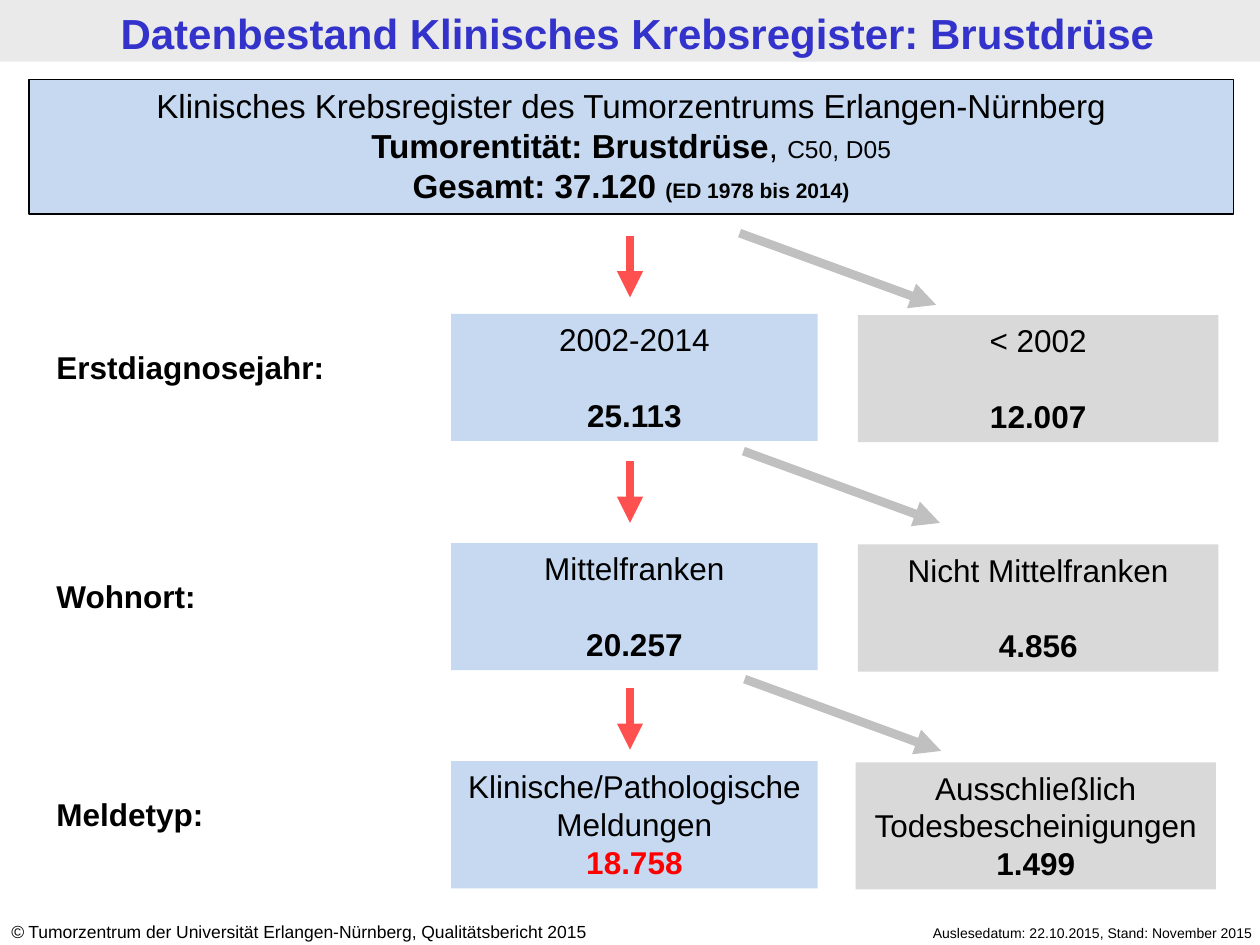
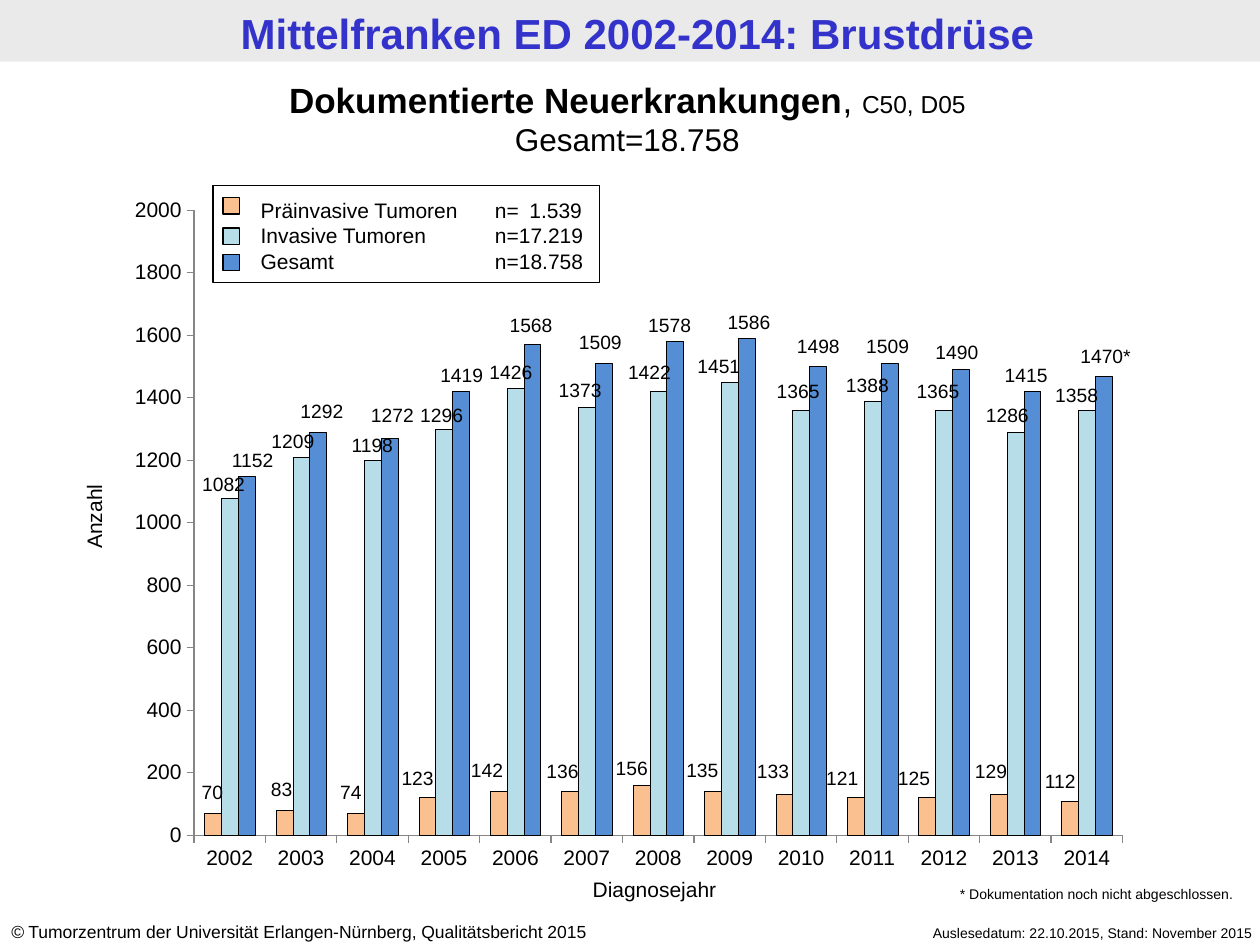
from lxml.etree import SubElement
from pptx import Presentation
from pptx.chart.data import CategoryChartData
from pptx.dml.color import RGBColor
from pptx.enum.chart import XL_CHART_TYPE, XL_TICK_LABEL_POSITION, XL_TICK_MARK
from pptx.enum.shapes import MSO_CONNECTOR, MSO_SHAPE
from pptx.enum.text import MSO_ANCHOR, PP_ALIGN
from pptx.oxml import parse_xml
from pptx.oxml.ns import nsdecls, qn
from pptx.util import Inches, Pt

FONT = "Arial"
COLORS = {
    "text": "000000", "title": "3333CC", "band": "EAEAEA", "kept": "C6D9F1",
    "excluded": "D9D9D9", "highlight": "FF0000", "kept_arrow": "FF5050",
    "excluded_arrow": "C0C0C0", "axis": "868686", "plot": "FFFFFF",
    "preinvasive": "FAC090", "invasive": "B7DEE8", "total": "558ED5",
}
LEFT, CENTER, RIGHT = PP_ALIGN.LEFT, PP_ALIGN.CENTER, PP_ALIGN.RIGHT

# A paragraph is a list of runs: (text, size, optional font settings)
BOLD, ITALIC = {"bold": True}, {"italic": True}
COPYRIGHT = [("©", 10, ITALIC),
             (" Tumorzentrum der Universität Erlangen-Nürnberg, Qualitätsbericht 2015", 10)]
READOUT = [("Auslesedatum: 22.10.2015, Stand: November 2015", 8)]

REGISTER_TITLE = "Datenbestand Klinisches Krebsregister: Brustdrüse"
REGISTER = [
    [("Klinisches Krebsregister des Tumorzentrums Erlangen-Nürnberg", 19)],
    [("Tumorentität: Brustdrüse", 19, BOLD), (", ", 19), ("C50, D05", 14)],
    [("Gesamt: 37.120 ", 19, BOLD), ("(ED 1978 bis 2014)", 12, BOLD)],
]
# Label, card top, kept and excluded cards, excluded left, red arrow top, grey arrow start
STEPS = [
    ("Erstdiagnosejahr:", 2.49, ("2002-2014", "25.113"), ("< 2002", "12.007"),
     6.81, 1.87, (5.87, 1.85)),
    ("Wohnort:", 4.31, ("Mittelfranken", "20.257"), ("Nicht Mittelfranken", "4.856"),
     6.81, 3.66, (5.9, 3.58)),
    ("Meldetyp:", 6.04, ("Klinische/Pathologische Meldungen", "18.758"),
     ("Ausschließlich Todesbescheinigungen", "1.499"), 6.79, 5.46, (5.91, 5.39)),
]
FINAL_COUNT = "18.758"

CASES_TITLE = "Mittelfranken ED 2002-2014: Brustdrüse"
CASES = [
    [("Dokumentierte Neuerkrankungen", 20, BOLD), (", ", 20), ("C50, D05", 14)],
    [("Gesamt=18.758", 18)],
]
# Name, count, colour, top of the legend swatch
SERIES = [
    ("Präinvasive Tumoren", "1.539", "preinvasive", 1.57),
    ("Invasive Tumoren", "17.219", "invasive", 1.81),
    ("Gesamt", "18.758", "total", 2.02),
]
# Year, then count, label left and label top for each series
YEARS = [
    ("2002", (70, 1.46, 6.14), (1082, 1.46, 3.7), (1152, 1.69, 3.51)),
    ("2003", (83, 2.01, 6.12), (1209, 2.01, 3.36), (1292, 2.24, 3.12)),
    ("2004", (74, 2.56, 6.14), (1198, 2.64, 3.39), (1272, 2.8, 3.15)),
    ("2005", (123, 3.05, 6.03), (1296, 3.19, 3.15), (1419, 3.35, 2.83)),
    ("2006", (142, 3.6, 5.97), (1426, 3.74, 2.81), (1568, 3.9, 2.44)),
    ("2007", (136, 4.2, 5.98), (1373, 4.29, 2.95), (1509, 4.45, 2.57)),
    ("2008", (156, 4.75, 5.95), (1422, 4.84, 2.81), (1578, 5, 2.44)),
    ("2009", (135, 5.31, 5.97), (1451, 5.39, 2.76), (1586, 5.63, 2.41)),
    ("2010", (133, 5.87, 5.98), (1365, 6.02, 2.96), (1498, 6.18, 2.6)),
    ("2011", (121, 6.42, 6.03), (1388, 6.57, 2.91), (1509, 6.73, 2.6)),
    ("2012", (125, 6.99, 6.03), (1365, 7.13, 2.96), (1490, 7.28, 2.65)),
    ("2013", (129, 7.6, 5.98), (1286, 7.68, 3.15), (1415, 7.83, 2.83)),
    ("2014", (112, 8.15, 6.06), (1358, 8.23, 2.99), (1470, 8.46, 2.68)),
]
UNFINISHED = ("2014", "Gesamt")
LABEL_WIDTHS = {2: 0.45, 3: 0.53, 4: 0.63}
CHART_PLACE = (0.91, 1.47, 8.16, 5.55)
PLOT_PLACE = (1.54, 1.67, 7.37, 4.96)


def color(name):
    return RGBColor.from_string(COLORS[name])


def inches(*lengths):
    return [Inches(length) for length in lengths]


def write(shape, paragraphs, align=LEFT, gap=0):
    """Fill a shape with paragraphs; gap is the space between them in points."""
    frame = shape.text_frame
    frame.word_wrap = True
    frame.vertical_anchor = MSO_ANCHOR.TOP
    for index, runs in enumerate(paragraphs):
        para = frame.add_paragraph() if index else frame.paragraphs[0]
        para.alignment = align
        if index and gap:
            para.space_before = Pt(gap)
        for text, size, *settings in runs:
            span = para.add_run()
            span.text = text
            style = {"bold": False, "italic": False, "color": "text"}
            style.update(*settings)
            span.font.name, span.font.size = FONT, Pt(size)
            span.font.bold, span.font.italic = style["bold"], style["italic"]
            span.font.color.rgb = color(style["color"])


def add_text(page, place, paragraphs, align=LEFT):
    box = page.shapes.add_textbox(*inches(*place))
    write(box, paragraphs, align)
    return box


def add_box(page, place, fill=None, outlined=False):
    box = page.shapes.add_shape(MSO_SHAPE.RECTANGLE, *inches(*place))
    box.shadow.inherit = False
    if fill:
        box.fill.solid()
        box.fill.fore_color.rgb = color(fill)
    else:
        box.fill.background()
    if outlined:
        box.line.color.rgb = color("text")
        box.line.width = Pt(0.75)
    else:
        box.line.fill.background()
    return box


def add_arrow(page, start, end, line_color):
    arrow = page.shapes.add_connector(MSO_CONNECTOR.STRAIGHT, *inches(*start, *end))
    arrow.line.color.rgb = color(line_color)
    arrow.line.width = Pt(5)
    SubElement(arrow.line._get_or_add_ln(), qn("a:tailEnd"), type="triangle")
    SubElement(arrow._element.spPr, qn("a:effectLst"))


def add_page(deck, title):
    """Add a slide with the title band and both footers."""
    page = deck.slides.add_slide(deck.slide_layouts[6])
    add_box(page, (0, 0, 10, 0.49), "band")
    heading = {"bold": True, "color": "title"}
    add_text(page, (0.06, 0.01, 10, 0.49), [[(title, 24, heading)]], CENTER)
    add_text(page, (-0.01, 7.26, 5.24, 0.27), [COPYRIGHT])
    add_text(page, (6.65, 7.29, 3.39, 0.24), [READOUT], RIGHT)
    return page


def add_card(page, left, top, width, fill, content):
    name, count = content
    count_style = {"bold": True, "color": "highlight" if count == FINAL_COUNT else "text"}
    card = add_box(page, (left, top, width, 1.01), fill)
    one_line_name = len(name) < 25
    write(card, [[(name, 18)], [(count, 18, count_style)]], CENTER,
          gap=21.6 if one_line_name else 0)


def build_register_page(deck):
    page = add_page(deck, REGISTER_TITLE)
    write(add_box(page, (0.23, 0.63, 9.56, 1.07), "kept", outlined=True), REGISTER, CENTER)
    for label, top, kept, excluded, excluded_left, red_top, grey_start in STEPS:
        add_text(page, (0.35, top + 0.22, 2.76, 0.4), [[(label, 18, BOLD)]])
        add_card(page, 3.58, top, 2.91, "kept", kept)
        add_card(page, excluded_left, top + 0.01, 2.86, "excluded", excluded)
        add_arrow(page, (5, red_top), (5, red_top + 0.49), "kept_arrow")
        grey_x, grey_y = grey_start
        add_arrow(page, grey_start, (grey_x + 1.56, grey_y + 0.57), "excluded_arrow")


def style_axis(axis):
    axis.has_major_gridlines = False
    axis.major_tick_mark = XL_TICK_MARK.OUTSIDE
    axis.minor_tick_mark = XL_TICK_MARK.NONE
    axis.tick_label_position = XL_TICK_LABEL_POSITION.LOW
    axis.format.line.color.rgb = color("axis")
    axis.format.line.width = Pt(0.75)
    font = axis.tick_labels.font
    font.name, font.size, font.color.rgb = FONT, Pt(12), color("text")


def fix_plot_area(chart):
    """Pin the inner plot area and give it a plain fill."""
    area = chart._chartSpace.chart.plotArea
    for layout in area.findall(qn("c:layout")):
        area.remove(layout)
    chart_left, chart_top, chart_width, chart_height = CHART_PLACE
    left, top, width, height = PLOT_PLACE
    parts = {"x": (left - chart_left) / chart_width, "y": (top - chart_top) / chart_height,
             "w": width / chart_width, "h": height / chart_height}
    sizes = "".join(f'<c:{key} val="{part:.4f}"/>' for key, part in parts.items())
    area.insert(0, parse_xml(
        f'<c:layout {nsdecls("c")}><c:manualLayout><c:layoutTarget val="inner"/>'
        f'<c:xMode val="edge"/><c:yMode val="edge"/>{sizes}</c:manualLayout></c:layout>'))
    area.append(parse_xml(
        f'<c:spPr {nsdecls("c", "a")}><a:solidFill><a:srgbClr val="{COLORS["plot"]}"/>'
        '</a:solidFill></c:spPr>'))


def add_cases_chart(page):
    data = CategoryChartData()
    data.categories = [year for year, *_ in YEARS]
    for index, (name, *_) in enumerate(SERIES, start=1):
        data.add_series(name, [round(row[index][0], -1) for row in YEARS])
    chart = page.shapes.add_chart(XL_CHART_TYPE.COLUMN_CLUSTERED,
                                  *inches(*CHART_PLACE), data).chart
    chart.has_legend = chart.has_title = False
    chart.font.name, chart.font.size = "Calibri", Pt(18)
    chart.font.color.rgb = color("text")
    style_axis(chart.category_axis)
    style_axis(chart.value_axis)
    chart.value_axis.minimum_scale, chart.value_axis.maximum_scale = 0, 2000
    chart.value_axis.major_unit = 200
    plot = chart.plots[0]
    plot.gap_width, plot.overlap, plot.vary_by_categories = 124, 0, False
    for bars, (_, _, fill, _) in zip(plot.series, SERIES):
        bars.format.fill.solid()
        bars.format.fill.fore_color.rgb = color(fill)
        bars.format.line.color.rgb = color("text")
        bars.format.line.width = Pt(0.25)
    fix_plot_area(chart)


def add_legend(page):
    add_box(page, (1.69, 1.47, 3.07, 0.77), outlined=True)
    for _, _, fill, top in SERIES:
        add_box(page, (1.77, top, 0.13, 0.13), fill, outlined=True)
    rows = [[(f"{name}\tn=\t{count}", 12)] for name, count, *_ in SERIES]
    box = add_text(page, (1.97, 1.52, 2.95, 0.71), rows)
    for para in box.text_frame.paragraphs:
        stops = SubElement(para._p.get_or_add_pPr(), qn("a:tabLst"))
        for position, side in ((1.86, "l"), (2.55, "r")):
            SubElement(stops, qn("a:tab"), pos=str(Inches(position)), algn=side)


def build_cases_page(deck):
    page = add_page(deck, CASES_TITLE)
    add_cases_chart(page)
    add_text(page, (-0.04, 0.57, 10.04, 0.74), CASES, CENTER)
    add_text(page, (3.66, 6.91, 3.07, 0.3), [[("Diagnosejahr", 12)]], CENTER)
    add_text(page, (-0.56, 3.95, 2.61, 0.3), [[("Anzahl", 12)]], CENTER).rotation = 270
    add_legend(page)
    add_text(page, (7.52, 6.98, 2.7, 0.24),
             [[("* Dokumentation noch nicht abgeschlossen.", 8)]])
    for year, *labels in YEARS:
        for (name, *_), (count, left, top) in zip(SERIES, labels):
            mark = "*" if (year, name) == UNFINISHED else ""
            width = LABEL_WIDTHS[len(str(count))]
            add_text(page, (left, top, width, 0.29), [[(f"{count}{mark}", 11)]], CENTER)


def main():
    deck = Presentation()
    deck.slide_width, deck.slide_height = inches(10, 7.5)
    build_register_page(deck)
    build_cases_page(deck)
    deck.save("out.pptx")


if __name__ == "__main__":
    main()
